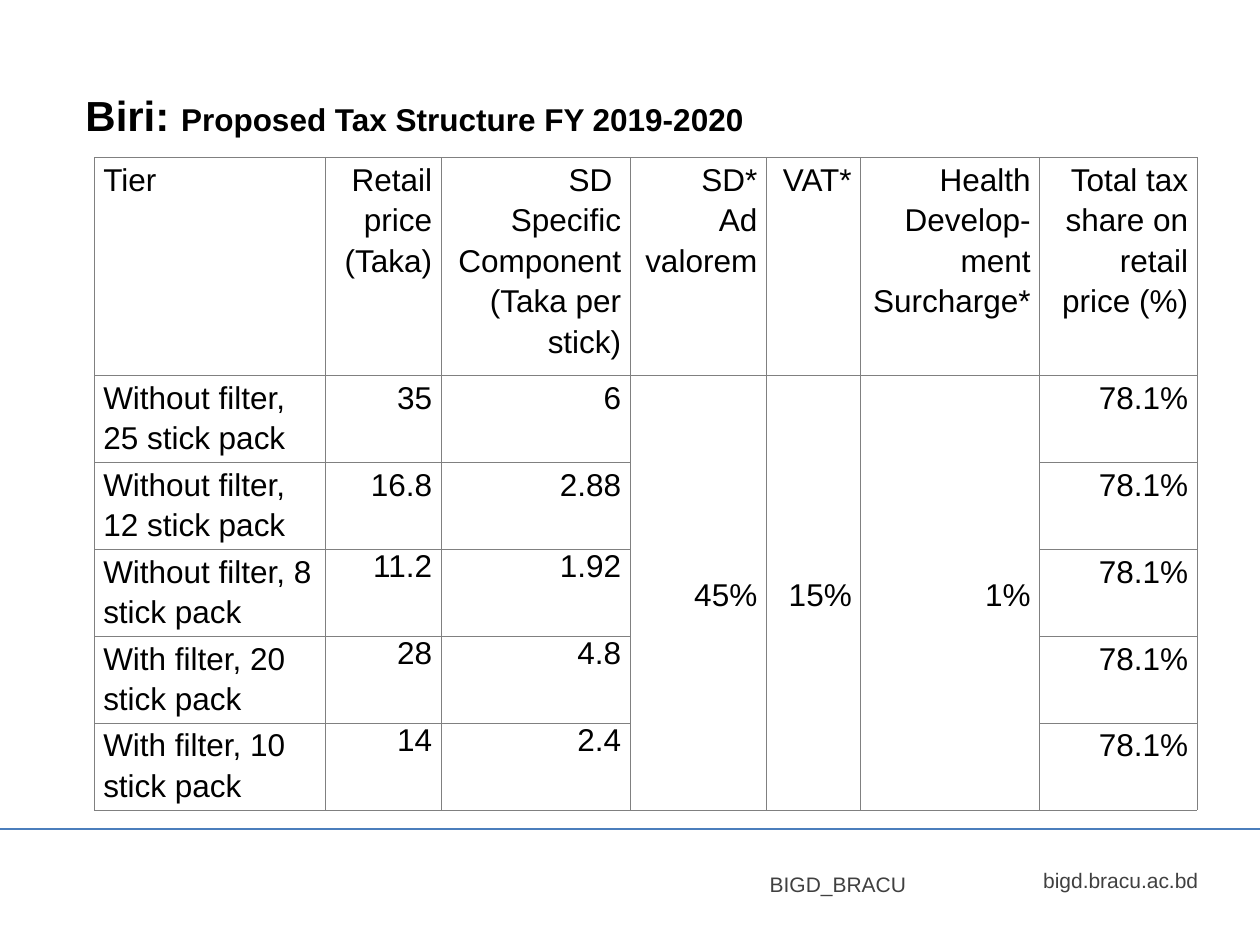
from dataclasses import dataclass

from lxml import etree
from pptx import Presentation
from pptx.dml.color import RGBColor
from pptx.enum import shapes, text
from pptx.oxml import ns
from pptx.util import Inches, Pt

COLORS = {"ink": "000000", "footer": "404040", "rule": "4B7EBC", "grid": "808080"}
FONT = "Arial"
RIGHT = text.PP_ALIGN.RIGHT
LEFT = text.PP_ALIGN.LEFT


@dataclass
class Label:
    left: float
    top: float
    width: float
    height: float
    spans: list[tuple[str, int]]
    color: str
    align: text.PP_ALIGN = LEFT
    bold: bool = False
    spacing: float = 1.0


LABELS = [
    Label(8.17, 6.84, 1.44, 0.3, [("bigd.bracu.ac.bd", 12)], "footer", RIGHT),
    Label(6.01, 6.87, 1.29, 0.3, [("BIGD_BRACU", 12)], "footer"),
    Label(0.58, 0.6, 5.47, 0.57,
          [("Biri: ", 24), ("Proposed Tax Structure FY 2019-2020", 18)],
          "ink", bold=True, spacing=1.15),
]

COLUMN_WIDTHS = [1.83, 0.92, 1.5, 1.08, 0.75, 1.42, 1.25]
HEADER_HEIGHT, ROW_HEIGHT = 1.73, 0.69
HEADERS = ["Tier", "Retail price (Taka)", "SD \nSpecific Component (Taka per stick)",
           "SD*\nAd valorem", "VAT*", "Health Develop-ment Surcharge*",
           "Total tax share on retail price (%)"]
# Tier, retail price, specific component, line spacing of the two figures
TIERS = [
    ("Without filter, 25 stick pack", "35", "6", 1.15),
    ("Without filter, 12 stick pack", "16.8", "2.88", 1.15),
    ("Without filter, 8 stick pack", "11.2", "1.92", 1.0),
    ("With filter, 20 stick pack", "28", "4.8", 1.0),
    ("With filter, 10 stick pack", "14", "2.4", 1.0),
]
SHARED_RATES = {3: "45%", 4: "15%", 5: "1%"}
TOTAL_SHARE = "78.1%"


def rgb(name: str) -> RGBColor:
    return RGBColor.from_string(COLORS[name])


def add_label(slide, label: Label) -> None:
    box = slide.shapes.add_textbox(Inches(label.left), Inches(label.top),
                                   Inches(label.width), Inches(label.height))
    box.text_frame.word_wrap = False
    box.text_frame.auto_size = text.MSO_AUTO_SIZE.SHAPE_TO_FIT_TEXT
    para = box.text_frame.paragraphs[0]
    para.alignment = label.align
    para.line_spacing = label.spacing
    para.font.name = FONT
    para.font.bold = label.bold
    para.font.color.rgb = rgb(label.color)
    for words, size in label.spans:
        span = para.add_run()
        span.text = words
        span.font.size = Pt(size)


def add_borders(cell) -> None:
    properties = cell._tc.get_or_add_tcPr()
    for position, side in enumerate(("lnL", "lnR", "lnT", "lnB")):
        line = etree.Element(ns.qn(f"a:{side}"), w=str(Pt(0.25)))
        fill = etree.SubElement(line, ns.qn("a:solidFill"))
        etree.SubElement(fill, ns.qn("a:srgbClr"), val=COLORS["grid"])
        properties.insert(position, line)


def write_cell(cell, words: str, align: text.PP_ALIGN, spacing: float = 1.15) -> None:
    cell.text = words
    for para in cell.text_frame.paragraphs:
        para.alignment = align
        para.line_spacing = spacing
        para.font.name = FONT
        para.font.size = Pt(18)
        para.font.bold = False
        para.font.color.rgb = rgb("ink")


def add_tax_table(slide) -> None:
    row_heights = [HEADER_HEIGHT] + [ROW_HEIGHT] * len(TIERS)
    frame = slide.shapes.add_table(
        len(row_heights), len(COLUMN_WIDTHS), Inches(0.75), Inches(1.25),
        Inches(sum(COLUMN_WIDTHS)), Inches(sum(row_heights)))
    table = frame.table
    table.first_row = table.horz_banding = False
    for column, width in zip(table.columns, COLUMN_WIDTHS):
        column.width = Inches(width)
    for row, height in zip(table.rows, row_heights):
        row.height = Inches(height)

    # Plain cells with a thin grid
    for cell in table.iter_cells():
        cell.margin_left = cell.margin_right = Inches(0.07)
        cell.margin_top = cell.margin_bottom = 0
        cell.fill.background()
        add_borders(cell)

    # Header row
    for index, header in enumerate(HEADERS):
        write_cell(table.cell(0, index), header, RIGHT if index else LEFT)

    # One row per tier
    for index, (tier, price, component, spacing) in enumerate(TIERS, start=1):
        write_cell(table.cell(index, 0), tier, LEFT)
        write_cell(table.cell(index, 1), price, RIGHT, spacing)
        write_cell(table.cell(index, 2), component, RIGHT, spacing)
        write_cell(table.cell(index, 6), TOTAL_SHARE, RIGHT)

    # Rates common to all tiers
    for index, rate in SHARED_RATES.items():
        cell = table.cell(1, index)
        cell.merge(table.cell(len(TIERS), index))
        cell.vertical_anchor = text.MSO_ANCHOR.MIDDLE
        write_cell(cell, rate, RIGHT)


def add_footer_rule(slide) -> None:
    rule = slide.shapes.add_connector(shapes.MSO_CONNECTOR.STRAIGHT, Inches(0),
                                      Inches(6.58), Inches(10), Inches(6.58))
    rule.line.color.rgb = rgb("rule")
    rule.line.width = Pt(0.75)
    etree.SubElement(rule._element.spPr, ns.qn("a:effectLst"))


def main() -> None:
    deck = Presentation()
    deck.slide_width, deck.slide_height = Inches(10), Inches(7.5)
    slide = deck.slides.add_slide(deck.slide_layouts[6])
    add_footer_rule(slide)
    add_tax_table(slide)
    for label in LABELS:
        add_label(slide, label)
    deck.save("out.pptx")


if __name__ == "__main__":
    main()
